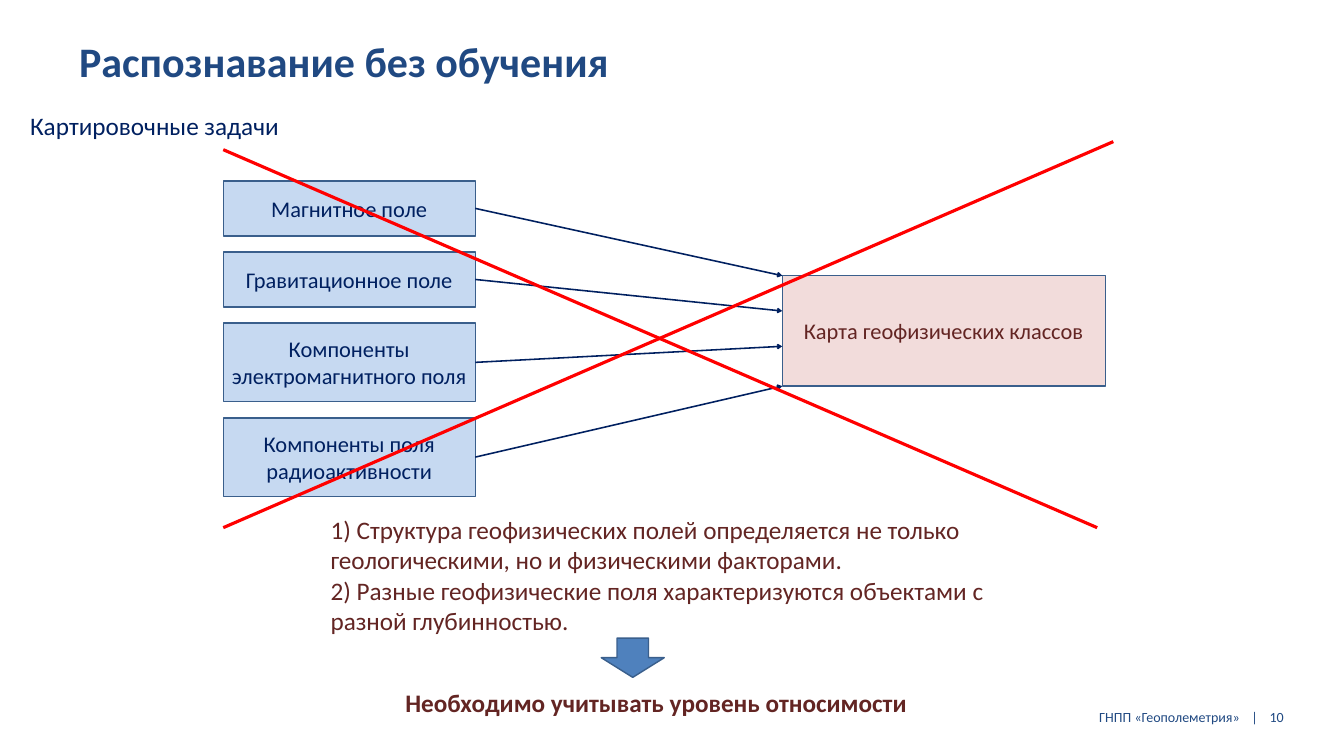
from dataclasses import dataclass
from lxml import etree
from pptx import Presentation
from pptx import util as u
from pptx.dml.color import RGBColor
from pptx.enum import shapes, text
from pptx.oxml.ns import qn

W, H = u.Inches(26.67), u.Inches(15)
COLS, ROWS = 160, 90
FONT = "Calibri"
COLORS = {
    "title": "204982", "navy": "002060", "maroon": "632523", "red": "FF0000",
    "field": "C6D9F1", "map": "F2DCDB", "arrow": "4F81BD", "border": "3A5F8C",
}
FIELDS = [
    ("Магнитное поле", 6.54),
    ("Гравитационное поле", 6.54),
    ("Компоненты электромагнитного поля", 9.36),
    ("Компоненты поля радиоактивности", 9.36),
]
REASONS = [
    "1) Структура геофизических полей определяется не только геологическими, но и физическими факторами.",
    "2) Разные геофизические поля характеризуются объектами с разной глубинностью.",
]


@dataclass
class Box:
    x: float
    y: float
    w: float
    h: float

    def inner(self, x, y, w, h):
        return Box(self.x + x, self.y + y, w, h)

    def point(self, x, y):
        return int((self.x + x) * W / COLS), int((self.y + y) * H / ROWS)

    def emu(self):
        return (*self.point(0, 0), int(self.w * W / COLS), int(self.h * H / ROWS))


def color(name):
    return RGBColor.from_string(COLORS[name])


def write(sp, lines, size, name, bold=False, align=text.PP_ALIGN.LEFT,
          anchor=text.MSO_ANCHOR.MIDDLE, insets=(0.1, 0.05)):
    tf = sp.text_frame
    tf.word_wrap = True
    tf.vertical_anchor = anchor
    tf.margin_left = tf.margin_right = u.Inches(insets[0])
    tf.margin_top = tf.margin_bottom = u.Inches(insets[1])
    tf.text = "\n".join(lines)
    for p in tf.paragraphs:
        p.alignment = align
        for r in p.runs:
            r.font.name, r.font.size, r.font.bold = FONT, u.Pt(size), bold
            r.font.color.rgb = color(name)
    return tf


def add_text(s, box, lines, size, name, **style):
    return write(s.shapes.add_textbox(*box.emu()), lines, size, name, **style)


def add_note(s, box, lines, name, **style):
    tf = add_text(s, box, lines, 36, name, anchor=text.MSO_ANCHOR.TOP, **style)
    tf.auto_size = text.MSO_AUTO_SIZE.SHAPE_TO_FIT_TEXT
    return tf


def add_block(s, kind, box, fill):
    sp = s.shapes.add_shape(kind, *box.emu())
    sp.shadow.inherit = False
    sp.fill.solid()
    sp.fill.fore_color.rgb = color(fill)
    sp.line.color.rgb = color("border")
    sp.line.width = u.Pt(2)
    return sp


def add_label(s, box, label, fill, name):
    sp = add_block(s, shapes.MSO_SHAPE.RECTANGLE, box, fill)
    write(sp, [label], 32, name, align=text.PP_ALIGN.CENTER)
    return sp


def add_line(owner, start, end, name, width):
    line = owner.shapes.add_connector(shapes.MSO_CONNECTOR.STRAIGHT, *start, *end)
    line.line.color.rgb = color(name)
    line.line.width = u.Pt(width)
    etree.SubElement(line._element.spPr, qn("a:effectLst"))
    return line


def add_header(s, box):
    title = s.shapes.title
    title.left, title.top, title.width, title.height = box.inner(7.98, 3, 109, 8.4).emu()
    write(title, ["Распознавание без обучения"], 60, "title", bold=True, insets=(0.24, 0.12))
    tf = add_note(s, box.inner(3, 12.84, 31.14, 4.26), ["Картировочные задачи"], "navy")
    tf.word_wrap = False


def add_diagram(s, box):
    field_w, gap = 30, 1.92
    target = box.inner(66.54, 15.96, 38.46, 13.14)
    add_label(s, target, "Карта геофизических классов", "map", "maroon")
    top = 4.68
    for (label, height), share in zip(FIELDS, (0, 0.32, 0.64, 1)):
        field = box.inner(0, top, field_w, height)
        sp = add_label(s, field, label, "field", "navy")
        line = add_line(s, field.point(field_w, height / 2),
                        target.point(0, share * target.h), "navy", 2.25)
        line.begin_connect(sp, 3)
        etree.SubElement(line.line._get_or_add_ln(), qn("a:tailEnd"), type="arrow")
        top += height + gap


def add_cross(s, box):
    group = s.shapes.add_group_shape()
    add_line(group, box.point(0, 0.96), box.point(104.04, box.h), "red", 4.5)
    add_line(group, box.point(0, box.h), box.point(box.w, 0), "red", 4.5)


def add_conclusion(s, box):
    add_note(s, box.inner(0, 0, 82.5, 15.12), REASONS, "maroon")
    add_block(s, shapes.MSO_SHAPE.DOWN_ARROW, box.inner(32.82, 15, 7.5, 4.68), "arrow")
    add_note(s, box.inner(4.68, 20.58, 69.36, 4.26),
             ["Необходимо учитывать уровень относимости"], "maroon",
             bold=True, align=text.PP_ALIGN.CENTER)


def add_footer(s, box):
    tf = add_text(s, box.inner(0, 0, 34.98, box.h), ["ГНПП «Геополеметрия»\t|"],
                  20, "title", insets=(0.24, 0.12))
    tf.margin_left, tf.margin_right = u.Inches(2.47), 0
    pPr = tf.paragraphs[0]._p.get_or_add_pPr()
    tabs = etree.SubElement(pPr, qn("a:tabLst"))
    etree.SubElement(tabs, qn("a:tab"), pos=str(u.Inches(3.02)), algn="l")
    add_text(s, box.inner(33.66, 0, 10.32, box.h), ["10"], 20, "title", insets=(0.24, 0.12))


def main():
    prs = Presentation()
    prs.slide_width, prs.slide_height = W, H
    s = prs.slides.add_slide(prs.slide_layouts[5])
    diagram = Box(26.58, 16.86, 105.96, 45.96)
    add_header(s, Box(0, 0, COLS, 17.1))
    add_footer(s, Box(116.04, 83.22, 43.98, 4.32))
    add_diagram(s, diagram)
    add_cross(s, diagram)
    add_conclusion(s, Box(38.76, 60.96, 82.5, 24.84))
    prs.save("out.pptx")


if __name__ == "__main__":
    main()
